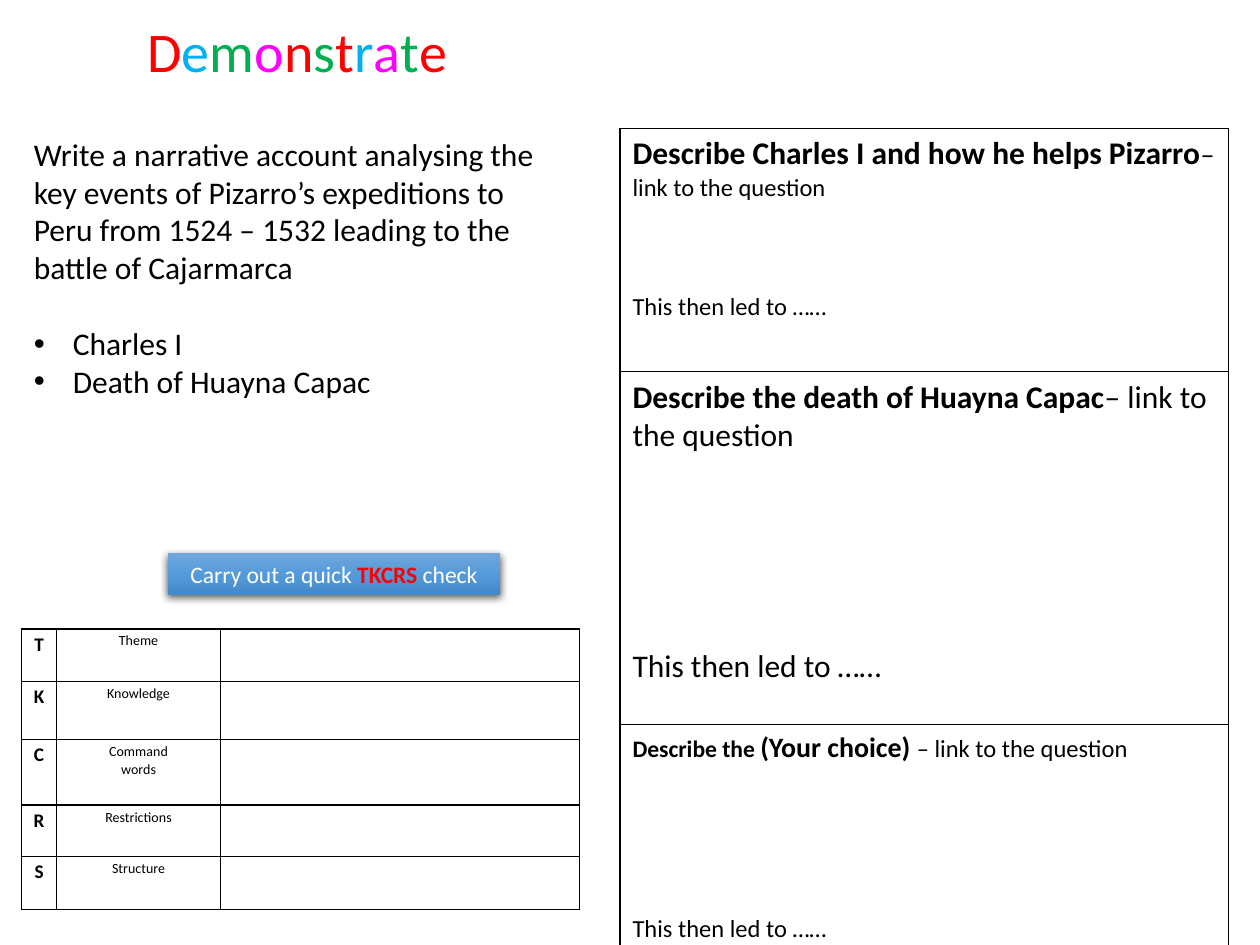
from lxml import etree
from pptx import Presentation
from pptx.dml.color import RGBColor
from pptx.enum.shapes import MSO_SHAPE
from pptx.enum.text import MSO_ANCHOR, PP_ALIGN
from pptx.oxml import parse_xml
from pptx.oxml.ns import nsdecls, qn
from pptx.util import Inches, Pt

RECTANGLE = MSO_SHAPE.RECTANGLE
LEFT, CENTER = PP_ALIGN.LEFT, PP_ALIGN.CENTER
TOP, MIDDLE = MSO_ANCHOR.TOP, MSO_ANCHOR.MIDDLE
FONT = "Calibri"
LINE_HEIGHT = 1.22
COLORS = {
    "black": "000000", "white": "FFFFFF", "red": "FF0000", "blue": "00B0F0",
    "green": "00B050", "pink": "FF00FF",
    "button top": "71A6DB", "button middle": "559BDB", "button bottom": "448ACA",
}

# Grid: two columns below the title
LEFT_COL, RIGHT_COL = Inches(0.17), Inches(4.92)
COL_WIDTH = Inches(4.43)
BODY_TOP, CHECK_TOP = Inches(1.02), Inches(4.99)


def write(para, spans, align=LEFT):
    """Fill a paragraph with (text, size, bold, color name) spans."""
    para.alignment = align
    for text, size, bold, color in spans:
        span = para.add_run()
        span.text = text
        span.font.name = FONT
        span.font.size = Pt(size)
        span.font.bold = bold
        span.font.color.rgb = RGBColor.from_string(COLORS[color])


def add_ruled_table(page, left, top, widths, heights):
    """Add a table without fill, ruled with thin black lines."""
    frame = page.shapes.add_table(len(heights), len(widths), left, top,
                                  Inches(sum(widths)), Inches(sum(heights)))
    table = frame.table
    table.first_row = table.horz_banding = False
    for column, width in zip(table.columns, widths):
        column.width = Inches(width)
    for row, height in zip(table.rows, heights):
        row.height = Inches(height)
    for cell in table.iter_cells():
        cell.fill.background()
        for index, side in enumerate(("lnL", "lnR", "lnT", "lnB")):
            cell._tc.tcPr.insert(index, parse_xml(
                f'<a:{side} {nsdecls("a")} w="{Pt(1)}"><a:solidFill>'
                f'<a:srgbClr val="{COLORS["black"]}"/></a:solidFill></a:{side}>'))
    return table


deck = Presentation()
deck.slide_width, deck.slide_height = Inches(10), Inches(7.5)
page = deck.slides.add_slide(deck.slide_layouts.get_by_name("Title Only"))

# Title, one color per letter
title = page.shapes.title
title.left, title.top = Inches(1.07), Inches(0.08)
title.width, title.height = Inches(5.35), Inches(0.64)
title.text_frame.vertical_anchor = TOP
letter_colors = ("red", "blue", "green", "pink", "red", "green",
                 "red", "blue", "pink", "green", "red")
write(title.text_frame.paragraphs[0],
      [(letter, 32, False, color) for letter, color in zip("Demonstrate", letter_colors)])

# Exam question with its prompts
question = page.shapes.add_textbox(LEFT_COL, BODY_TOP, COL_WIDTH, Inches(2.52))
question.text_frame.word_wrap = True
write(question.text_frame.paragraphs[0], [(
    "Write a narrative account analysing the key events of Pizarro’s expeditions "
    "to Peru from 1524 – 1532 leading to the battle of Cajarmarca", 18, False, "black")])
for index, prompt in enumerate(("Charles I", "Death of Huayna Capac")):
    para = question.text_frame.add_paragraph()
    write(para, [(prompt, 18, False, "black")])
    if index == 0:
        para.space_before = Pt(18 * LINE_HEIGHT)
    props = para._p.get_or_add_pPr()
    props.set("marL", str(Inches(0.31)))
    props.set("indent", str(-Inches(0.31)))
    etree.SubElement(props, qn("a:buFont")).set("typeface", "Arial")
    etree.SubElement(props, qn("a:buChar")).set("char", "•")

# Button above the checklist
button = page.shapes.add_shape(RECTANGLE, Inches(1.33), Inches(4.39),
                               Inches(2.64), Inches(0.33))
button.line.fill.background()
button.shadow.inherit = False
stops = "".join(
    f'<a:gs pos="{share * 1000}"><a:srgbClr val="{COLORS["button " + part]}"/></a:gs>'
    for share, part in ((0, "top"), (50, "middle"), (100, "bottom")))
shape_props = button._element.spPr
shape_props.find(qn("a:prstGeom")).addnext(parse_xml(
    f'<a:gradFill {nsdecls("a")} rotWithShape="1"><a:gsLst>{stops}</a:gsLst>'
    '<a:lin ang="5400000" scaled="0"/></a:gradFill>'))
shape_props.find(qn("a:effectLst")).append(parse_xml(
    f'<a:outerShdw {nsdecls("a")} blurRad="{Pt(4.5)}" dist="{Pt(1.5)}" dir="5400000" '
    f'algn="ctr" rotWithShape="0"><a:srgbClr val="{COLORS["black"]}">'
    '<a:alpha val="63000"/></a:srgbClr></a:outerShdw>'))
button.text_frame.word_wrap = True
button.text_frame.vertical_anchor = MIDDLE
write(button.text_frame.paragraphs[0], [
    ("Carry out a quick ", 13.5, False, "white"),
    ("TKCRS", 13.5, True, "red"),
    (" check", 13.5, False, "white")], CENTER)

# TKCRS checklist
checks = (("T", "Theme"), ("K", "Knowledge"), ("C", "Command\nwords"),
          ("R", "Restrictions"), ("S", "Structure"))
checklist = add_ruled_table(page, LEFT_COL, CHECK_TOP, (0.28, 1.3, 2.85),
                            (0.42, 0.46, 0.52, 0.41, 0.42))
for row, (initial, meaning) in enumerate(checks):
    for column, (text, size, bold) in enumerate(((initial, 11, True), (meaning, 8, False))):
        cell = checklist.cell(row, column)
        cell.margin_left = cell.margin_right = Inches(0.06)
        cell.margin_top = cell.margin_bottom = Inches(0.03)
        for number, line in enumerate(text.split("\n")):
            frame = cell.text_frame
            para = frame.add_paragraph() if number else frame.paragraphs[0]
            write(para, [(line, size, bold, "black")], CENTER)

# Answer frame: heading spans, size of the closing line, free lines above it
answers = (
    ([("Describe Charles I and how he helps Pizarro", 18, True, "black"),
      ("– ", 16, False, "black"),
      ("link to the question", 14, False, "black")], 14, 3),
    ([("Describe the death of Huayna Capac", 18, True, "black"),
      ("– link to the question", 18, False, "black")], 18, 5),
    ([("Describe the ", 13.5, True, "black"),
      ("(Your choice) ", 16, True, "black"),
      ("– link to the question", 14, False, "black")], 14, 5),
)
answer_table = add_ruled_table(page, RIGHT_COL, BODY_TOP, (4.83,), (1.93, 2.8, 1.93))
for row, (heading, size, free_lines) in enumerate(answers):
    frame = answer_table.cell(row, 0).text_frame
    write(frame.paragraphs[0], heading)
    closing = frame.add_paragraph()
    closing.space_before = Pt(round(free_lines * size * LINE_HEIGHT))
    write(closing, [("This then led to ……", size, False, "black")])

deck.save("out.pptx")
